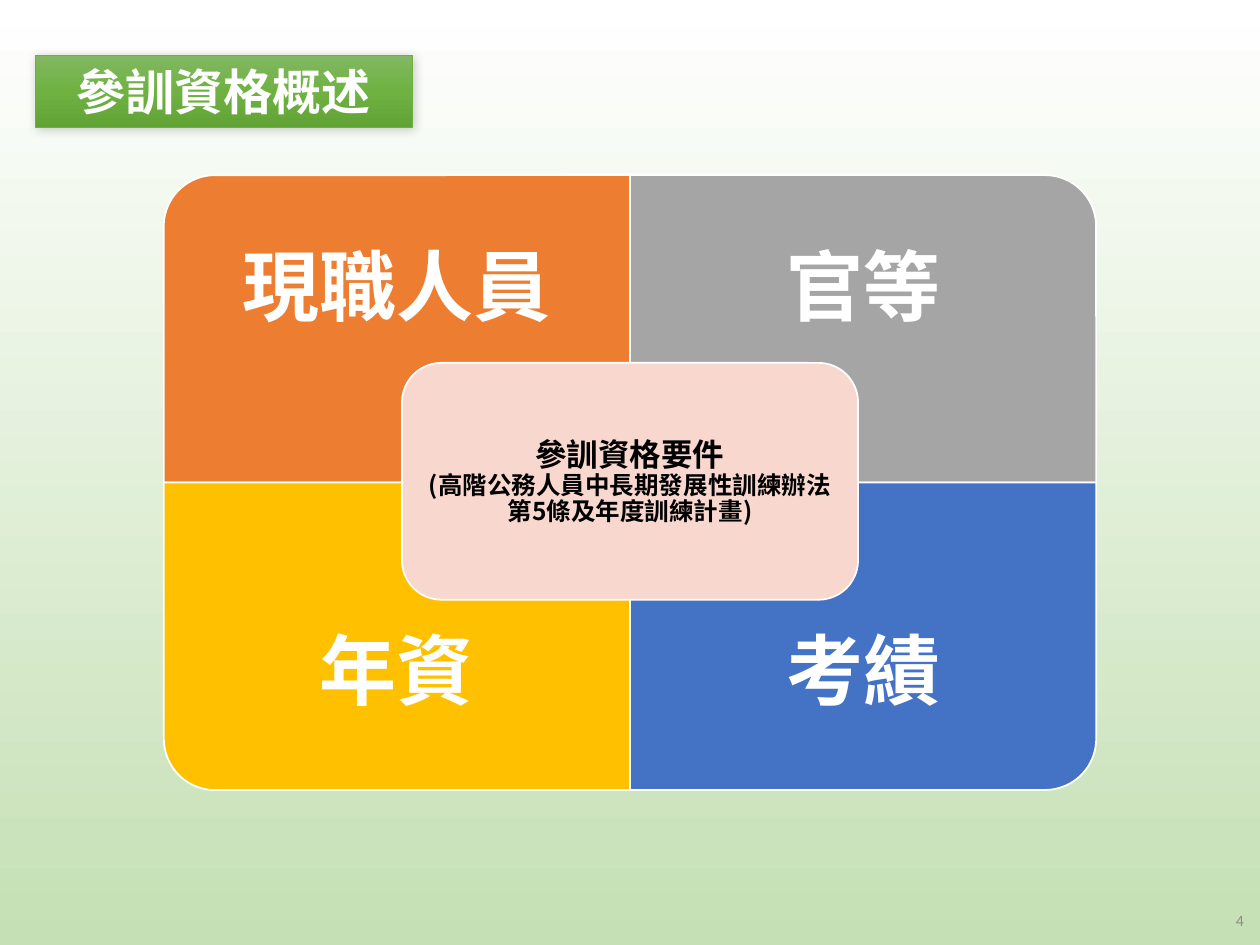
from copy import deepcopy

from lxml import etree
from pptx import Presentation
from pptx.dml.color import RGBColor
from pptx.enum.shapes import MSO_SHAPE
from pptx.enum.text import MSO_ANCHOR, MSO_AUTO_SIZE, PP_ALIGN
from pptx.oxml import parse_xml
from pptx.oxml.ns import qn
from pptx.util import Inches, Pt

RECTANGLE = MSO_SHAPE.RECTANGLE
ROUNDED = MSO_SHAPE.ROUNDED_RECTANGLE
ONE_ROUND_CORNER = MSO_SHAPE.ROUND_1_RECTANGLE
MIDDLE = MSO_ANCHOR.MIDDLE
CENTER, RIGHT = PP_ALIGN.CENTER, PP_ALIGN.RIGHT
GROW = MSO_AUTO_SIZE.SHAPE_TO_FIT_TEXT

WHITE = RGBColor(0xFF, 0xFF, 0xFF)
BLACK = RGBColor(0x00, 0x00, 0x00)
GREY_TEXT = RGBColor(0x8C, 0x8C, 0x8C)
PALE_GREEN = RGBColor(0xC5, 0xE0, 0xB4)
GREEN_LINE = RGBColor(0x70, 0xAD, 0x47)
TITLE_GREENS = [RGBColor(0x81, 0xB8, 0x61), RGBColor(0x6F, 0xB2, 0x42),
                RGBColor(0x62, 0xA3, 0x36)]
ORANGE = RGBColor(0xED, 0x7D, 0x31)
GREY = RGBColor(0xA5, 0xA5, 0xA5)
GOLD = RGBColor(0xFF, 0xC0, 0x00)
BLUE = RGBColor(0x44, 0x72, 0xC4)
PINK = RGBColor(0xF8, 0xD7, 0xCE)

CJK_FONT = "Noto Sans CJK SC"
LATIN_FONT = "Calibri"

# Matrix: four quadrants that meet in the middle of the slide
CENTER_X, CENTER_Y = 5, 3.83
QUADRANT_WIDTH, QUADRANT_HEIGHT = 3.7, 2.44
LABEL_HEIGHT = 1.83
# Text, colour, column, row, rotation that turns the round corner outwards
QUADRANTS = [
    ("現職人員", ORANGE, 0, 0, 270),
    ("官等", GREY, 1, 0, 0),
    ("年資", GOLD, 0, 1, 180),
    ("考績", BLUE, 1, 1, 90),
]

SHADOW = (
    '<a:effectLst xmlns:a="http://schemas.openxmlformats.org/drawingml/2006/main">'
    '<a:outerShdw blurRad="76200" dist="12700" dir="2700000" rotWithShape="0">'
    '<a:srgbClr val="000000"><a:alpha val="20000"/></a:srgbClr>'
    '</a:outerShdw></a:effectLst>'
)


def set_gradient(fill, colors):
    """Spread the colours evenly from top to bottom."""
    fill.gradient()
    fill.gradient_angle = 270
    stop_list = fill.gradient_stops[0]._gs.getparent()
    while len(stop_list) < len(colors):
        stop_list.append(deepcopy(stop_list[-1]))
    for index, (stop, color) in enumerate(zip(fill.gradient_stops, colors)):
        stop.position = index / (len(colors) - 1)
        stop.color.rgb = color


def write_text(shape, parts, color, font_name=CJK_FONT, bold=True,
               align=CENTER, inset=None, line_spacing=None):
    """Write (text, size) parts as the lines of one paragraph."""
    frame = shape.text_frame
    frame.word_wrap = True
    frame.vertical_anchor = MIDDLE
    if inset is not None:
        for side in ("left", "top", "right", "bottom"):
            setattr(frame, f"margin_{side}", Inches(inset))
    paragraph = frame.paragraphs[0]
    paragraph.alignment = align
    paragraph.line_spacing = line_spacing
    for index, (text, size) in enumerate(parts):
        if index:
            paragraph.add_line_break()
        run = paragraph.add_run()
        run.text = text
        font_format = {"size": Pt(size), "bold": bold, "name": font_name}
        for name, value in font_format.items():
            setattr(run.font, name, value)
        run.font.color.rgb = color
        east_asian = etree.SubElement(run.font._element, qn("a:ea"))
        east_asian.set("typeface", font_name)


def add_text(shapes, box, parts, color, **text_format):
    textbox = shapes.add_textbox(*map(Inches, box))
    write_text(textbox, parts, color, **text_format)


def add_block(shapes, kind, box, color, rotation=0):
    """Add a filled shape with a thin white outline."""
    shape = shapes.add_shape(kind, *map(Inches, box))
    shape.shadow.inherit = False
    shape.rotation = rotation
    shape.fill.solid()
    shape.fill.fore_color.rgb = color
    shape.line.color.rgb = WHITE
    shape.line.width = Pt(1)


def add_quadrant(shapes, text, color, column, row, rotation):
    left = CENTER_X + (column - 1) * QUADRANT_WIDTH
    top = CENTER_Y + (row - 1) * QUADRANT_HEIGHT
    # A quarter turn swaps width and height around the same centre
    width, height = QUADRANT_WIDTH, QUADRANT_HEIGHT
    if rotation % 180:
        width, height = height, width
    box = (left + (QUADRANT_WIDTH - width) / 2,
           top + (QUADRANT_HEIGHT - height) / 2, width, height)
    add_block(shapes, ONE_ROUND_CORNER, box, color, rotation)
    # Labels keep to the outer edge, clear of the centre box
    label_top = top + row * (QUADRANT_HEIGHT - LABEL_HEIGHT)
    add_text(shapes, (left, label_top, QUADRANT_WIDTH, LABEL_HEIGHT),
             [(text, 44)], WHITE, inset=0.34, line_spacing=0.9)


def add_title(shapes, text):
    shape = shapes.add_shape(
        RECTANGLE, *map(Inches, (0.28, 0.44, 2.99, 0.57)))
    set_gradient(shape.fill, TITLE_GREENS)
    shape.line.color.rgb = GREEN_LINE
    shape.line.width = Pt(0.5)
    shape._element.spPr.append(parse_xml(SHADOW))
    write_text(shape, [(text, 28)], WHITE)
    shape.text_frame.auto_size = GROW


def main():
    presentation = Presentation()
    presentation.slide_width = Inches(10)
    presentation.slide_height = Inches(7.5)
    slide = presentation.slides.add_slide(presentation.slide_layouts[6])
    set_gradient(slide.background.fill, [WHITE, PALE_GREEN])

    # Slide number
    add_text(slide.shapes, (7.72, 7.1, 2.25, 0.4), [("4", 9)], GREY_TEXT,
             font_name=LATIN_FONT, bold=False, align=RIGHT)

    # Matrix with its centre box
    matrix = slide.shapes.add_group_shape().shapes
    for quadrant in QUADRANTS:
        add_quadrant(matrix, *quadrant)
    add_block(matrix, ROUNDED, (3.19, 2.88, 3.62, 1.88), PINK)
    add_text(matrix, (3.28, 2.98, 3.44, 1.7),
             [("參訓資格要件", 18),
              ("(高階公務人員中長期發展性訓練辦法第5條及年度訓練計畫)", 14)],
             BLACK, inset=0.07, line_spacing=0.9)

    # Title
    add_title(slide.shapes, "參訓資格概述")

    presentation.save("out.pptx")


if __name__ == "__main__":
    main()
